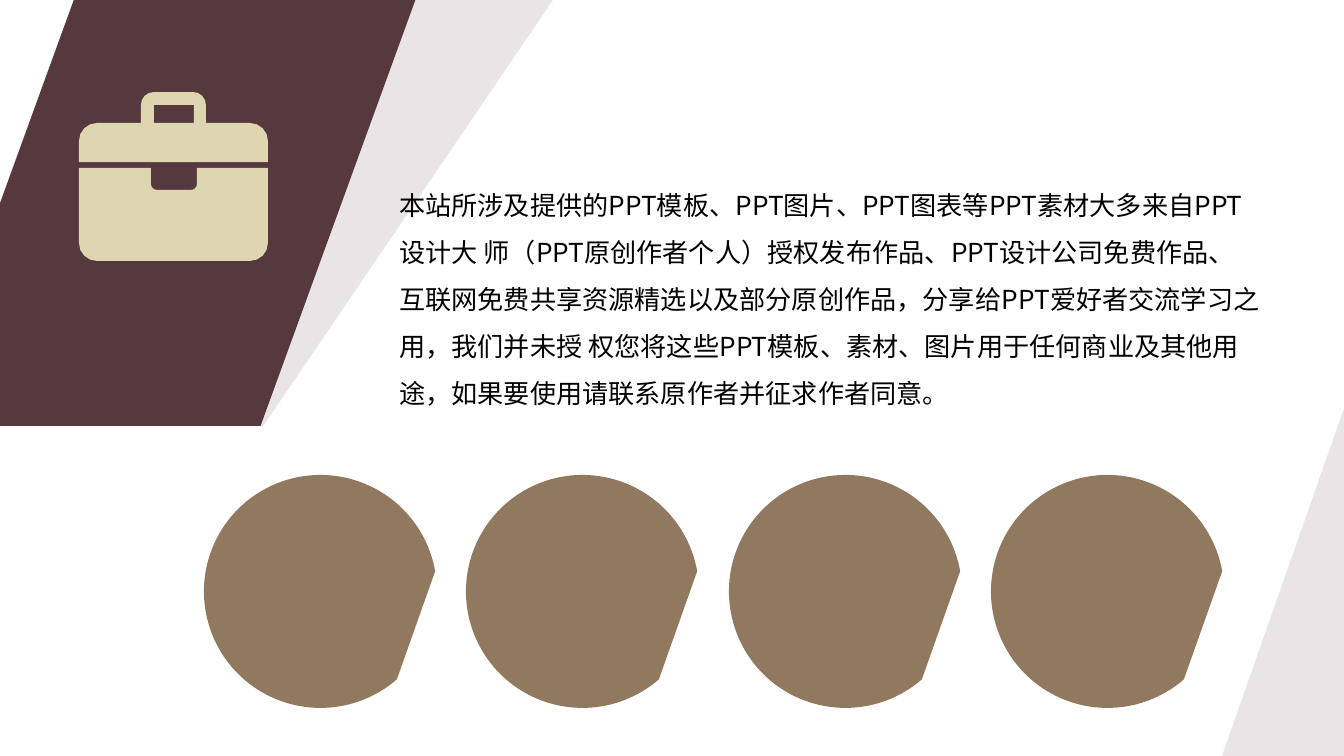
from dataclasses import dataclass
from math import cos, hypot, pi, sin

from lxml.etree import SubElement
from pptx import Presentation
from pptx.dml.color import RGBColor
from pptx.enum.shapes import MSO_SHAPE
from pptx.enum.text import MSO_AUTO_SIZE
from pptx.oxml.ns import qn
from pptx.util import Emu, Inches, Pt

SLIDE_WIDTH, SLIDE_HEIGHT = 1344, 756
EMU_PER_PX = Inches(10) / SLIDE_WIDTH

WHITE = RGBColor(0xFF, 0xFF, 0xFF)
BLACK = RGBColor(0x00, 0x00, 0x00)
PLUM = RGBColor(0x56, 0x39, 0x3E)
SAND = RGBColor(0xDE, 0xD6, 0xB1)
BROWN = RGBColor(0x91, 0x79, 0x60)
FONT = "Noto Sans CJK SC"

STATEMENT = (
    "本站所涉及提供的PPT模板、PPT图片、PPT图表等PPT素材大多来自PPT设计大 师"
    "（PPT原创作者个人）授权发布作品、PPT设计公司免费作品、互联网免费共享资源精选"
    "以及部分原创作品，分享给PPT爱好者交流学习之用，我们并未授 权您将这些PPT模板、"
    "素材、图片用于任何商业及其他用途，如果要使用请联系原作者并征求作者同意。"
)


@dataclass
class Panel:
    left: int
    top: int
    width: int
    height: int
    color: RGBColor
    kind: MSO_SHAPE = MSO_SHAPE.PARALLELOGRAM
    adjustments: tuple[float, ...] = ()
    opacity: int = 100


@dataclass
class Corner:
    x: int
    y: int
    radius: int = 0


BACKGROUND = [
    Panel(0, 0, SLIDE_WIDTH, SLIDE_HEIGHT, WHITE, MSO_SHAPE.RECTANGLE, opacity=61),
    Panel(-81, -175, 560, 601, PLUM, adjustments=(0.39,)),
    Panel(1222, 0, 577, 756, PLUM, adjustments=(0.46,), opacity=13),
    Panel(13, -175, 659, 601, PLUM, adjustments=(0.68,), opacity=13),
]

CASE_BODY = [
    Corner(79, 168), Corner(151, 168), Corner(151, 190, 6), Corner(197, 190, 6),
    Corner(197, 168), Corner(268, 168), Corner(268, 261, 18), Corner(79, 261, 18),
]
CASE_LID = [
    Corner(79, 162), Corner(79, 123, 18), Corner(141, 123), Corner(141, 92, 13),
    Corner(206, 92, 13), Corner(206, 123), Corner(268, 123, 18), Corner(268, 162),
]
HANDLE_HOLE = [Corner(154, 105), Corner(194, 105), Corner(194, 123), Corner(154, 123)]

DISC_COUNT, DISC_PITCH = 4, 262.4
DISC_LEFT, DISC_TOP, DISC_SIZE = 204, 475, 233
DEGREE = 0.6  # one degree of a shape adjustment
DISC_CUT = (49 * DEGREE, 350 * DEGREE)


def px(length: float) -> Emu:
    return Emu(round(length * EMU_PER_PX))


def paint(shape, color: RGBColor, opacity: int = 100) -> None:
    shape.shadow.inherit = False
    shape.line.fill.background()
    shape.fill.solid()
    shape.fill.fore_color.rgb = color
    if opacity < 100:
        tint = shape.fill._xPr.find(".//" + qn("a:srgbClr"))
        SubElement(tint, qn("a:alpha"), val=str(opacity * 1000))


def draw_panel(shapes, panel: Panel) -> None:
    shape = shapes.add_shape(
        panel.kind, px(panel.left), px(panel.top), px(panel.width), px(panel.height))
    for index, value in enumerate(panel.adjustments):
        shape.adjustments[index] = value
    paint(shape, panel.color, panel.opacity)


def round_off(corners: list[Corner], steps: int = 4) -> list[tuple[float, float]]:
    """Return the outline with each right-angled corner turned into an arc."""
    points = []
    for index, corner in enumerate(corners):
        if not corner.radius:
            points.append((corner.x, corner.y))
            continue
        neighbours = (corners[index - 1], corners[(index + 1) % len(corners)])
        (back_x, back_y), (ahead_x, ahead_y) = [
            ((other.x - corner.x) / hypot(other.x - corner.x, other.y - corner.y),
             (other.y - corner.y) / hypot(other.x - corner.x, other.y - corner.y))
            for other in neighbours
        ]
        for step in range(steps + 1):
            angle = pi / 2 * step / steps
            back = corner.radius * (1 - sin(angle))
            ahead = corner.radius * (1 - cos(angle))
            points.append((corner.x + back * back_x + ahead * ahead_x,
                           corner.y + back * back_y + ahead * ahead_y))
    return points


def draw_outline(shapes, color: RGBColor, *contours: list[Corner]) -> None:
    scaled = [[(px(x), px(y)) for x, y in round_off(contour)] for contour in contours]
    builder = shapes.build_freeform(*scaled[0][0])
    for index, contour in enumerate(scaled):
        if index:
            builder.move_to(*contour[0])
        builder.add_line_segments(contour[1:], close=True)
    paint(builder.convert_to_shape(), color)


def add_text(shapes, text: str, *, left: int, top: int, width: int, height: int,
             size: int, color: RGBColor, spacing: float) -> None:
    box = shapes.add_textbox(px(left), px(top), px(width), px(height))
    frame = box.text_frame
    frame.word_wrap = True
    frame.auto_size = MSO_AUTO_SIZE.SHAPE_TO_FIT_TEXT
    para = frame.paragraphs[0]
    para.line_spacing = spacing
    span = para.add_run()
    span.text = text
    span.font.size = Pt(size)
    span.font.color.rgb = color
    span.font.name = FONT
    SubElement(span.font._element, qn("a:ea"), typeface=FONT)


def main() -> None:
    deck = Presentation()
    deck.slide_width, deck.slide_height = px(SLIDE_WIDTH), px(SLIDE_HEIGHT)
    shapes = deck.slides.add_slide(deck.slide_layouts[6]).shapes

    # Slanted background panels
    for panel in BACKGROUND:
        draw_panel(shapes, panel)

    # Briefcase icon
    briefcase = shapes.add_group_shape().shapes
    draw_outline(briefcase, SAND, CASE_BODY)
    draw_outline(briefcase, SAND, CASE_LID, HANDLE_HOLE)

    # Row of cut discs
    for index in range(DISC_COUNT):
        left = round(DISC_LEFT + index * DISC_PITCH)
        draw_panel(shapes, Panel(left, DISC_TOP, DISC_SIZE, DISC_SIZE, BROWN,
                                 MSO_SHAPE.CHORD, DISC_CUT))

    # Statement
    add_text(shapes, STATEMENT, left=386, top=167, width=888, height=246,
             size=14, color=BLACK, spacing=1.5)

    deck.save("out.pptx")


if __name__ == "__main__":
    main()
